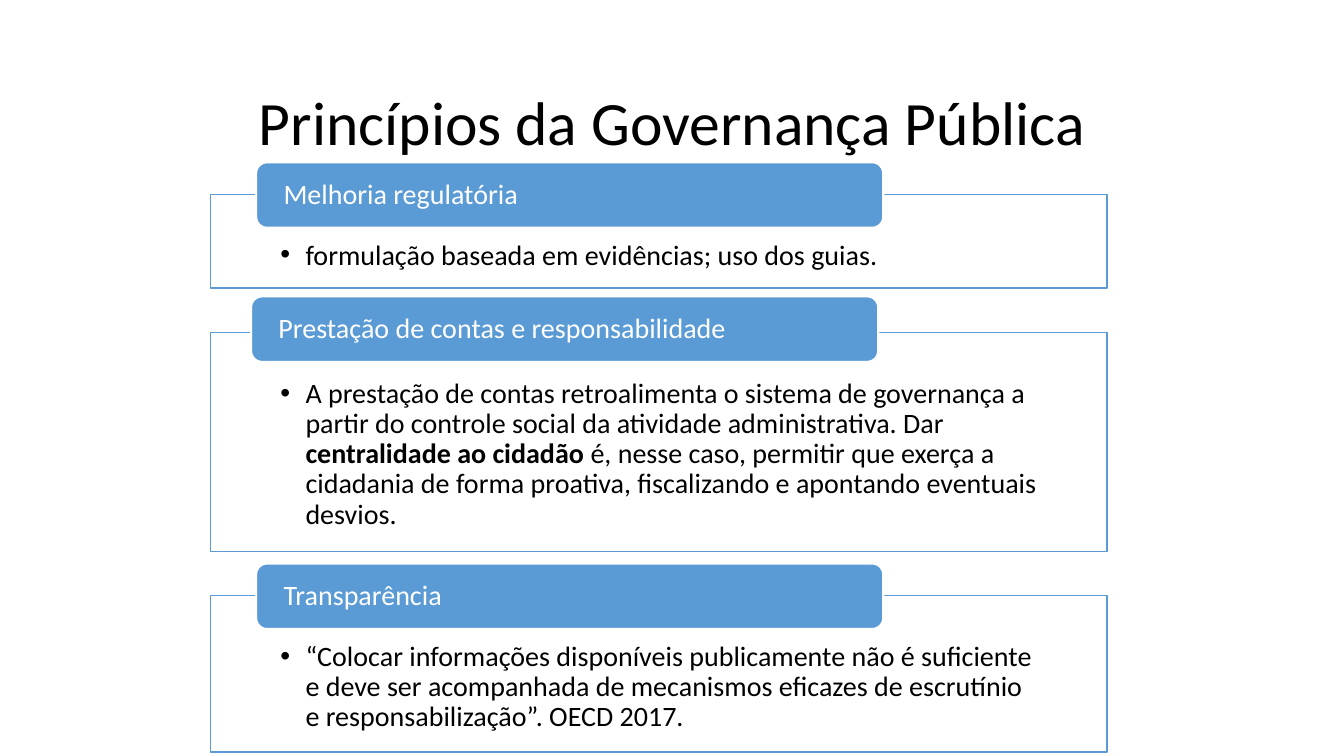
"""Build the slide on the principles of public governance."""
from dataclasses import dataclass

from lxml.etree import SubElement
from pptx import Presentation
from pptx.dml.color import RGBColor
from pptx.enum.shapes import MSO_SHAPE
from pptx.enum.text import MSO_ANCHOR, PP_ALIGN
from pptx.oxml.ns import qn
from pptx.shapes.autoshape import Shape
from pptx.slide import Slide
from pptx.util import Inches, Pt

BLUE = RGBColor(0x5B, 0x9B, 0xD5)
WHITE = RGBColor(0xFF, 0xFF, 0xFF)
BLACK = RGBColor(0x00, 0x00, 0x00)
FONT = "Calibri"
PANEL_LEFT, PANEL_WIDTH = 2.09, 8.89
HEADING_WIDTH, HEADING_HEIGHT = 6.22, 0.65


@dataclass(frozen=True)
class Principle:
    heading: str
    heading_left: float
    heading_top: float
    panel_top: float
    panel_height: float
    before: str
    bold: str = ""
    after: str = ""


PRINCIPLES = [
    Principle("Melhoria regulatória", 2.54, 1.61, 1.93, 0.93,
              "formulação baseada em evidências; uso dos guias."),
    Principle("Prestação de contas e responsabilidade", 2.49, 2.94, 3.3, 2.17,
              "A prestação de contas retroalimenta o sistema de governança a partir do "
              "controle social da atividade administrativa. Dar ",
              "centralidade ao cidadão ",
              "é, nesse caso, permitir que exerça a cidadania de forma proativa, "
              "fiscalizando e apontando eventuais desvios."),
    Principle("Transparência", 2.54, 5.59, 5.91, 1.55,
              "“Colocar informações disponíveis publicamente não é suficiente e deve ser "
              "acompanhada de mecanismos eficazes de escrutínio e responsabilização”. "
              "OECD 2017."),
]


def add_box(slide: Slide, kind: MSO_SHAPE, bounds: tuple[float, float, float, float],
            fill: RGBColor, line: RGBColor, line_width: float) -> Shape:
    """Add a filled, outlined shape without a shadow."""
    shape = slide.shapes.add_shape(kind, *(Inches(length) for length in bounds))
    shape.shadow.inherit = False
    shape.fill.solid()
    shape.fill.fore_color.rgb = fill
    shape.line.color.rgb = line
    shape.line.width = Pt(line_width)
    return shape


def set_margins(shape: Shape, side: float, top: float, bottom: float) -> None:
    """Set the text margins of a shape."""
    text_frame = shape.text_frame
    text_frame.word_wrap = True
    text_frame.margin_left = text_frame.margin_right = Inches(side)
    text_frame.margin_top, text_frame.margin_bottom = Inches(top), Inches(bottom)


def format_text(shape: Shape, size: float, color: RGBColor, alignment: PP_ALIGN) -> None:
    """Format the only paragraph of a shape and its runs."""
    paragraph = shape.text_frame.paragraphs[0]
    paragraph.alignment = alignment
    paragraph.line_spacing = 0.9
    for run in paragraph.runs:
        run.font.name = FONT
        run.font.size = Pt(size)
        run.font.color.rgb = color


def add_panel(slide: Slide, principle: Principle) -> None:
    """Add the outlined panel with its bulleted description."""
    bounds = (PANEL_LEFT, principle.panel_top, PANEL_WIDTH, principle.panel_height)
    panel = add_box(slide, MSO_SHAPE.RECTANGLE, bounds, WHITE, BLUE, 1)
    fill_color = panel.fill._xPr.find(qn("a:solidFill"))[0]
    SubElement(fill_color, qn("a:alpha"), val="90000")
    set_margins(panel, 0.69, 0.46, 0.16)
    panel.text_frame.vertical_anchor = MSO_ANCHOR.TOP
    paragraph = panel.text_frame.paragraphs[0]
    properties = paragraph._p.get_or_add_pPr()
    properties.set("marL", str(Inches(0.25)))
    properties.set("indent", str(-Inches(0.25)))
    SubElement(properties, qn("a:buFont"), typeface="Arial")
    SubElement(properties, qn("a:buChar"), char="•")
    for text in filter(None, (principle.before, principle.bold, principle.after)):
        run = paragraph.add_run()
        run.text = text
        run.font.bold = text == principle.bold
    format_text(panel, 20, BLACK, PP_ALIGN.LEFT)


def add_heading(slide: Slide, principle: Principle) -> None:
    """Add the rounded heading that overlaps the top of its panel."""
    bounds = (principle.heading_left, principle.heading_top, HEADING_WIDTH, HEADING_HEIGHT)
    heading = add_box(slide, MSO_SHAPE.ROUNDED_RECTANGLE, bounds, BLUE, WHITE, 1.5)
    set_margins(heading, 0.24, 0, 0)
    heading.text_frame.vertical_anchor = MSO_ANCHOR.MIDDLE
    heading.text_frame.text = principle.heading
    format_text(heading, 20, WHITE, PP_ALIGN.LEFT)


def set_title(slide: Slide) -> None:
    """Place and format the slide title."""
    title = slide.shapes.title
    title.left, title.top = Inches(0.92), Inches(0.87)
    title.width, title.height = Inches(11.5), Inches(1.45)
    title.text_frame.text = "Princípios da Governança Pública"
    title.text_frame.vertical_anchor = MSO_ANCHOR.TOP
    format_text(title, 44, BLACK, PP_ALIGN.CENTER)


def main() -> None:
    """Build and save the presentation."""
    presentation = Presentation()
    presentation.slide_width, presentation.slide_height = Inches(13.33), Inches(7.5)
    slide = presentation.slides.add_slide(presentation.slide_layouts[5])
    set_title(slide)
    for principle in PRINCIPLES:
        add_panel(slide, principle)
        add_heading(slide, principle)
    presentation.save("out.pptx")


if __name__ == "__main__":
    main()
